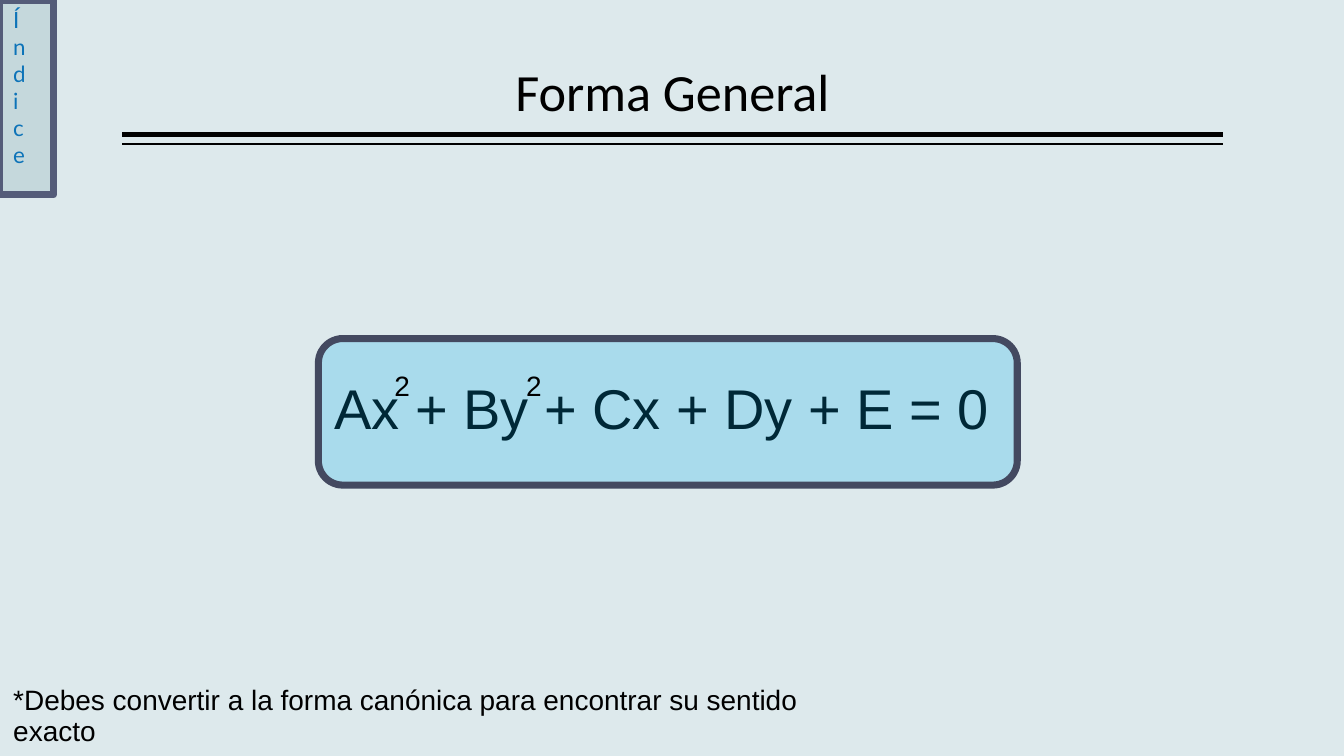
import pptx
import pptx.dml.color
import pptx.enum.shapes
import pptx.enum.text
import pptx.oxml.ns
import pptx.util
from lxml import etree

Pt = pptx.util.Pt
RGB = pptx.dml.color.RGBColor.from_string
qn = pptx.oxml.ns.qn
SHAPE = pptx.enum.shapes.MSO_SHAPE
ANCHOR = pptx.enum.text.MSO_ANCHOR
ALIGN = pptx.enum.text.PP_ALIGN

COLORS = {
    "background": "DDE9EC",
    "ink": "000000",
    "index_text": "0070C0",
    "index_fill": "528693",
    "index_border": "545C79",
    "formula_fill": "00B0F0",
    "formula_border": "434960",
}


class SlideBuilder:
    """Holds the text style and the current slide."""

    font = "Arial"
    insets = (7.2, 3.6, 7.2, 3.6)

    def __init__(self, prs):
        self.slide = prs.slides.add_slide(prs.slide_layouts[6])
        fill = self.slide.background.fill
        fill.solid()
        fill.fore_color.rgb = RGB(COLORS["background"])

    def text(self, box, text, size, font=None, color="ink", insets=None,
             vert=None, frame_format=None, para_format=None):
        sp = self.slide.shapes.add_textbox(*map(Pt, box))
        tf = sp.text_frame
        sides = ("margin_left", "margin_top", "margin_right", "margin_bottom")
        frame = dict(zip(sides, map(Pt, insets or self.insets)), word_wrap=True)
        for name, value in (frame | (frame_format or {})).items():
            setattr(tf, name, value)
        if vert:
            sp.element.txBody.find(qn("a:bodyPr")).set("vert", vert)
        p = tf.paragraphs[0]
        for name, value in (para_format or {}).items():
            setattr(p, name, value)
        r = p.add_run()
        r.text = text
        for name, value in {"name": font or self.font, "size": Pt(size)}.items():
            setattr(r.font, name, value)
        r.font.color.rgb = RGB(COLORS[color])

    def panel(self, kind, box, fill, border, opacity, width=3.78):
        sp = self.slide.shapes.add_shape(kind, *map(Pt, box))
        sp.shadow.inherit = False
        sp.fill.solid()
        sp.fill.fore_color.rgb = RGB(COLORS[fill])
        sp.line.color.rgb = RGB(COLORS[border])
        sp.line.width = Pt(width)
        color = sp.element.spPr.find(qn("a:solidFill"))[0]
        etree.SubElement(color, qn("a:alpha")).set("val", str(opacity * 1000))

    def rule(self, left, right, y, width):
        line = self.slide.shapes.add_connector(
            pptx.enum.shapes.MSO_CONNECTOR.STRAIGHT,
            Pt(left), Pt(y), Pt(right), Pt(y))
        line.line.color.rgb = RGB(COLORS["ink"])
        line.line.width = Pt(width)
        etree.SubElement(line.element.spPr, qn("a:effectLst"))


def main():
    prs = pptx.Presentation()
    prs.slide_width, prs.slide_height = Pt(720), Pt(405)
    s = SlideBuilder(prs)

    # Title above a double rule
    for y, width in ((72, 3), (77, 1)):
        s.rule(65.5, 655, y, width)
    s.text((65.5, 4.3, 589.5, 64.8), "Forma General", 28, font="Calibri",
           insets=(0, 3.6, 0, 3.6),
           frame_format={"vertical_anchor": ANCHOR.BOTTOM},
           para_format={"alignment": ALIGN.CENTER, "line_spacing": 0.9})

    # General equation under a translucent panel
    s.text((172, 196.6, 395, 44), "Ax + By + Cx + Dy + E = 0", 30)
    s.panel(SHAPE.ROUNDED_RECTANGLE, (170.6, 181.4, 374.4, 78.5),
            "formula_fill", "formula_border", 23)

    # Index tab
    s.text((0, 0, 31, 113), "Índice", 12, font="Lato", color="index_text",
           vert="wordArtVert")
    s.panel(SHAPE.RECTANGLE, (0, 0, 28.8, 104.4),
            "index_fill", "index_border", 17)

    # Footnote
    s.text((0, 364.3, 470, 41),
           "*Debes convertir a la forma canónica para encontrar su sentido exacto",
           15, para_format={"line_spacing": 0.9})

    # Exponents of x and y
    for left in (211.2, 281.9):
        s.text((left, 197.3, 12, 18), "2", 15, insets=(0, 0, 0, 0))

    prs.save("out.pptx")


if __name__ == "__main__":
    main()
